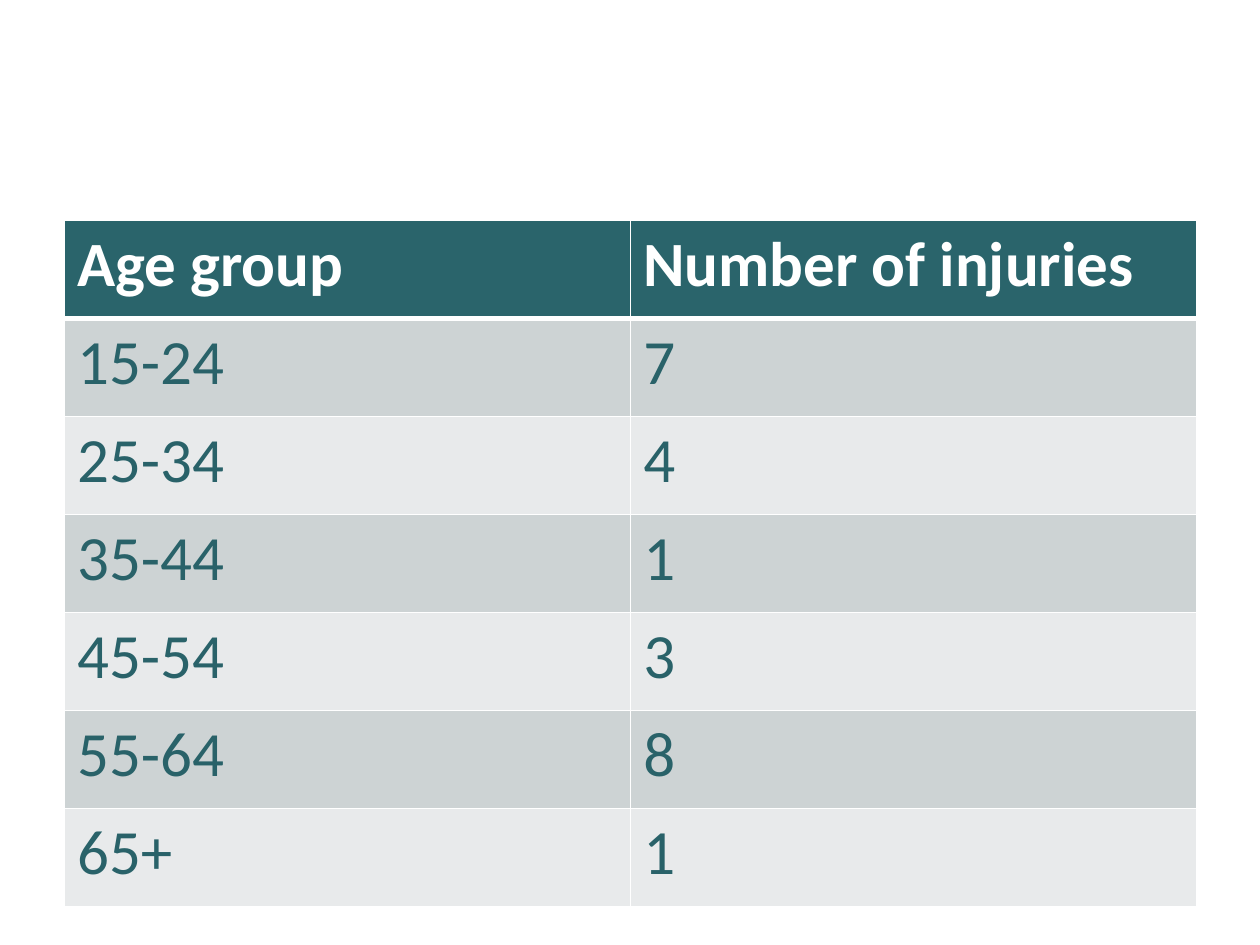
from lxml import etree
from pptx import Presentation
from pptx.dml.color import RGBColor
from pptx.oxml.ns import qn
from pptx.util import Pt

COLORS = {
    "header": "2A646B",
    "header_text": "FFFFFF",
    "body_text": "296269",
    "band_dark": "CDD3D4",
    "band_light": "E8EAEB",
    "border": "FFFFFF",
}
ROWS = [
    ("Age group", "Number of injuries"),
    ("15-24", "7"),
    ("25-34", "4"),
    ("35-44", "1"),
    ("45-54", "3"),
    ("55-64", "8"),
    ("65+", "1"),
]


def rgb(name):
    return RGBColor.from_string(COLORS[name])


def set_borders(cell, widths):
    """Draw cell borders; widths maps lnL, lnR, lnT, lnB, in that order, to points."""
    tc_pr = cell._tc.get_or_add_tcPr()
    for side, width in widths.items():
        ln = etree.SubElement(tc_pr, qn(f"a:{side}"), w=str(Pt(width)))
        fill = etree.SubElement(ln, qn("a:solidFill"))
        etree.SubElement(fill, qn("a:srgbClr"), val=COLORS["border"])


def format_cell(cell, text, row):
    is_header = row == 0
    set_borders(cell, {"lnL": 1, "lnR": 1,
                       "lnT": 3 if row == 1 else 1,
                       "lnB": 3 if is_header else 1})
    band = "band_dark" if row % 2 else "band_light"
    cell.fill.solid()
    cell.fill.fore_color.rgb = rgb("header" if is_header else band)
    r = cell.text_frame.paragraphs[0].add_run()
    r.text = text
    for name, value in {"name": "Calibri", "size": Pt(36), "bold": is_header}.items():
        setattr(r.font, name, value)
    r.font.color.rgb = rgb("header_text" if is_header else "body_text")


def add_injury_table(s, left, top, width, height):
    shape = s.shapes.add_table(len(ROWS), len(ROWS[0]),
                               Pt(left), Pt(top), Pt(width), Pt(height))
    table = shape.table
    for column in table.columns:
        column.width = Pt(width / len(ROWS[0]))
    for i, texts in enumerate(ROWS):
        table.rows[i].height = Pt(height / len(ROWS))
        for j, text in enumerate(texts):
            format_cell(table.cell(i, j), text, i)


def main():
    prs = Presentation()
    prs.slide_width, prs.slide_height = Pt(720), Pt(540)
    s = prs.slides.add_slide(prs.slide_layouts[6])
    add_injury_table(s, 36.9, 126, 647, 392)
    prs.save("out.pptx")


if __name__ == "__main__":
    main()
